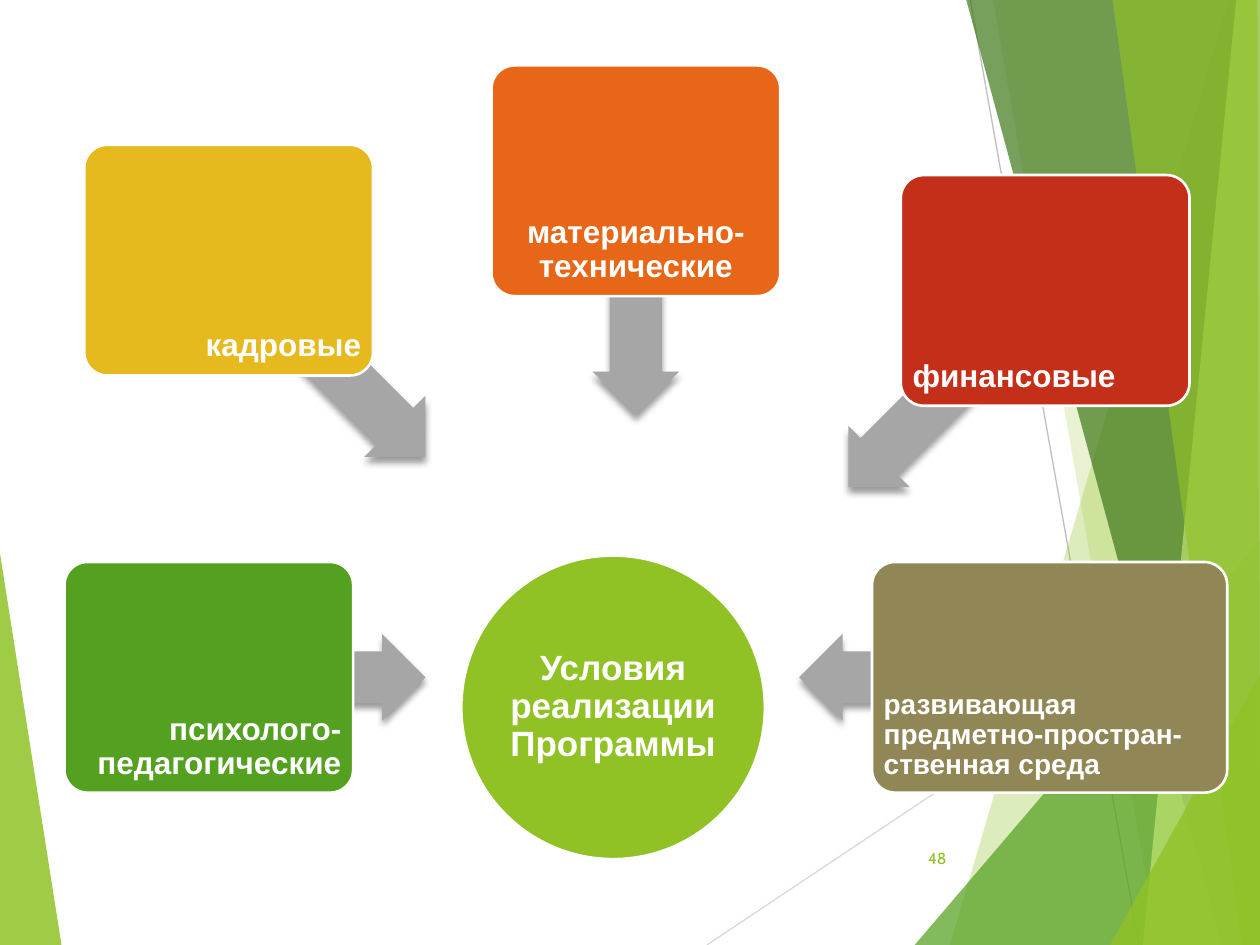
import math

from lxml import etree
from pptx import Presentation
from pptx import util as u
from pptx.dml.color import RGBColor
from pptx.enum import shapes, text
from pptx.oxml import ns

# Theme: colours, fonts and type sizes
THEME = {
    "lime": "90C226", "green": "54A021", "forest": "3F7819", "pale": "C0E474",
    "yellow": "E6B91E", "orange": "E76618", "red": "C42F1A", "khaki": "918655",
    "arrow": "A6A6A6", "white": "FFFFFF", "shadow": "000000",
    "rule_light": "D9D9D9", "rule_dark": "BFBFBF",
    "body": "Arial", "numeral": "Cabin",
    "hub_size": 20, "card_size": 18, "small_size": 16, "number_size": 9,
}

# Content, in centimetres
W, H = 25.4, 19.05
CARD_W, CARD_H, WIDE_CARD_W = 5.82, 4.65, 7.16
ARROW_H = 1.75

RULES = [
    ((14.25, H), (W, 11.61), "rule_light"),
    ((19.56, 0), (22.96, H), "rule_dark"),
]
# Facets: corner points, colour, opacity in percent
LEFT_FACET = ([(0, 11.15), (1.24, H), (0, H)], "lime", 85)
RIGHT_FACETS = [
    ([(24.77, 0), (19.15, H), (W, H), (W, 0)], "lime", 30),
    ([(20.02, 0), (23.34, H), (W, H), (W, 0)], "lime", 20),
    ([(18.44, H), (W, 10.9), (W, H)], "green", 72),
    ([(19.48, 0), (24.64, H), (W, H), (W, 0)], "forest", 70),
    ([(24.92, 0), (23.04, H), (W, H), (W, 0)], "pale", 70),
    ([(22.43, 0), (25.04, H), (W, H), (25.35, 0)], "lime", 65),
    ([(22.38, H), (W, 13.59), (W, H)], "lime", 80),
]
HUB = ("Условия реализации Программы", 9.3, 11.2, 6.12)
# Conditions: wording, left, top, width, colour, alignment, size, arrow length, arrow turn
CONDITIONS = [
    ("развивающая предметно-простран-ственная среда",
     17.58, 11.33, WIDE_CARD_W, "khaki", "LEFT", "small_size", 5.05, 0),
    ("финансовые", 18.16, 3.53, CARD_W, "red", "LEFT", "card_size", 5.61, 315),
    ("материально-технические",
     9.91, 1.32, CARD_W, "orange", "CENTER", "card_size", 4.72, 270),
    ("кадровые", 1.7, 2.92, CARD_W, "yellow", "RIGHT", "card_size", 5.61, 225),
    ("психолого-педагогические",
     1.3, 11.33, CARD_W, "green", "RIGHT", "card_size", 4.37, 180),
]
PAGE_NUMBER = ("48", 17.91, 16.79, 1.42, 1.02)


def rgb(name):
    return RGBColor.from_string(THEME[name])


def paint(shape, fill, outline=None, opacity=100):
    shape.shadow.inherit = False
    shape.fill.solid()
    shape.fill.fore_color.rgb = rgb(fill)
    if opacity < 100:
        colour = shape.fill._xPr.find(".//" + ns.qn("a:srgbClr"))
        etree.SubElement(colour, ns.qn("a:alpha"), val=str(opacity * 1000))
    if outline:
        shape.line.color.rgb = rgb(outline)
        shape.line.width = u.Pt(1.5)
    else:
        shape.line.fill.background()


def write(shape, wording, *, size="card_size", font="body", colour="white",
          bold=True, align="CENTER", anchor="MIDDLE", inset=0.1, spacing=0.9):
    frame = shape.text_frame
    frame.word_wrap = True
    frame.vertical_anchor = text.MSO_ANCHOR[anchor]
    frame.margin_left = frame.margin_right = u.Cm(inset)
    frame.margin_top = frame.margin_bottom = u.Cm(inset)
    paragraph = frame.paragraphs[0]
    paragraph.alignment = text.PP_ALIGN[align]
    paragraph.line_spacing = spacing
    run = paragraph.add_run()
    run.text = wording
    run.font.name = THEME[font]
    run.font.size = u.Pt(THEME[size])
    run.font.bold = bold
    run.font.color.rgb = rgb(colour)


def add_preset(slide, kind, left, top, width, height):
    return slide.shapes.add_shape(kind, u.Cm(left), u.Cm(top), u.Cm(width), u.Cm(height))


def add_facet(slide, corners, fill, opacity):
    points = [(u.Cm(x), u.Cm(y)) for x, y in corners]
    builder = slide.shapes.build_freeform(*points[0])
    builder.add_line_segments(points[1:], close=True)
    paint(builder.convert_to_shape(), fill, opacity=opacity)


def add_rule(slide, start, end, colour):
    rule = slide.shapes.add_connector(
        shapes.MSO_CONNECTOR.STRAIGHT, *(u.Cm(value) for value in start + end))
    rule.line.color.rgb = rgb(colour)
    rule.line.width = u.Pt(0.75)
    etree.SubElement(rule._element.spPr, ns.qn("a:effectLst"))


def add_arrow(slide, tail_x, tail_y, length, turn):
    """An arrow whose tail sits at the centre of its card."""
    angle = math.radians(turn)
    middle_x = tail_x - length / 2 * math.cos(angle)
    middle_y = tail_y - length / 2 * math.sin(angle)
    arrow = add_preset(slide, shapes.MSO_SHAPE.LEFT_ARROW, middle_x - length / 2,
                       middle_y - ARROW_H / 2, length, ARROW_H)
    arrow.rotation = turn
    arrow.adjustments[0], arrow.adjustments[1] = 0.6, 0.5
    paint(arrow, "arrow")
    effects = arrow._element.spPr.find(ns.qn("a:effectLst"))
    shadow = etree.SubElement(
        effects, ns.qn("a:outerShdw"), blurRad=str(u.Pt(4)), dist=str(u.Pt(3)),
        dir="5400000", rotWithShape="0")
    colour = etree.SubElement(shadow, ns.qn("a:srgbClr"), val=THEME["shadow"])
    etree.SubElement(colour, ns.qn("a:alpha"), val="40000")


def main():
    deck = Presentation()
    deck.slide_width, deck.slide_height = u.Cm(W), u.Cm(H)
    slide = deck.slides.add_slide(deck.slide_layouts[6])

    # Background facets and thin rules
    add_facet(slide, *LEFT_FACET)
    for rule in RULES:
        add_rule(slide, *rule)
    for facet in RIGHT_FACETS:
        add_facet(slide, *facet)

    # Page number
    wording, *place = PAGE_NUMBER
    number = slide.shapes.add_textbox(*(u.Cm(value) for value in place))
    write(number, wording, size="number_size", font="numeral", colour="lime",
          bold=False, align="RIGHT", inset=0.25, spacing=1.0)

    # Central circle
    wording, left, top, diameter = HUB
    hub = add_preset(slide, shapes.MSO_SHAPE.OVAL, left, top, diameter, diameter)
    paint(hub, "lime", "white")
    write(hub, wording, size="hub_size", inset=0.04)

    # Condition cards, each over its arrow
    for wording, left, top, width, fill, align, size, length, turn in CONDITIONS:
        add_arrow(slide, left + width / 2, top + CARD_H / 2, length, turn)
        card = add_preset(slide, shapes.MSO_SHAPE.ROUNDED_RECTANGLE,
                          left, top, width, CARD_H)
        card.adjustments[0] = 0.1
        paint(card, fill, "white")
        write(card, wording, size=size, align=align, anchor="BOTTOM")

    deck.save("out.pptx")


if __name__ == "__main__":
    main()
